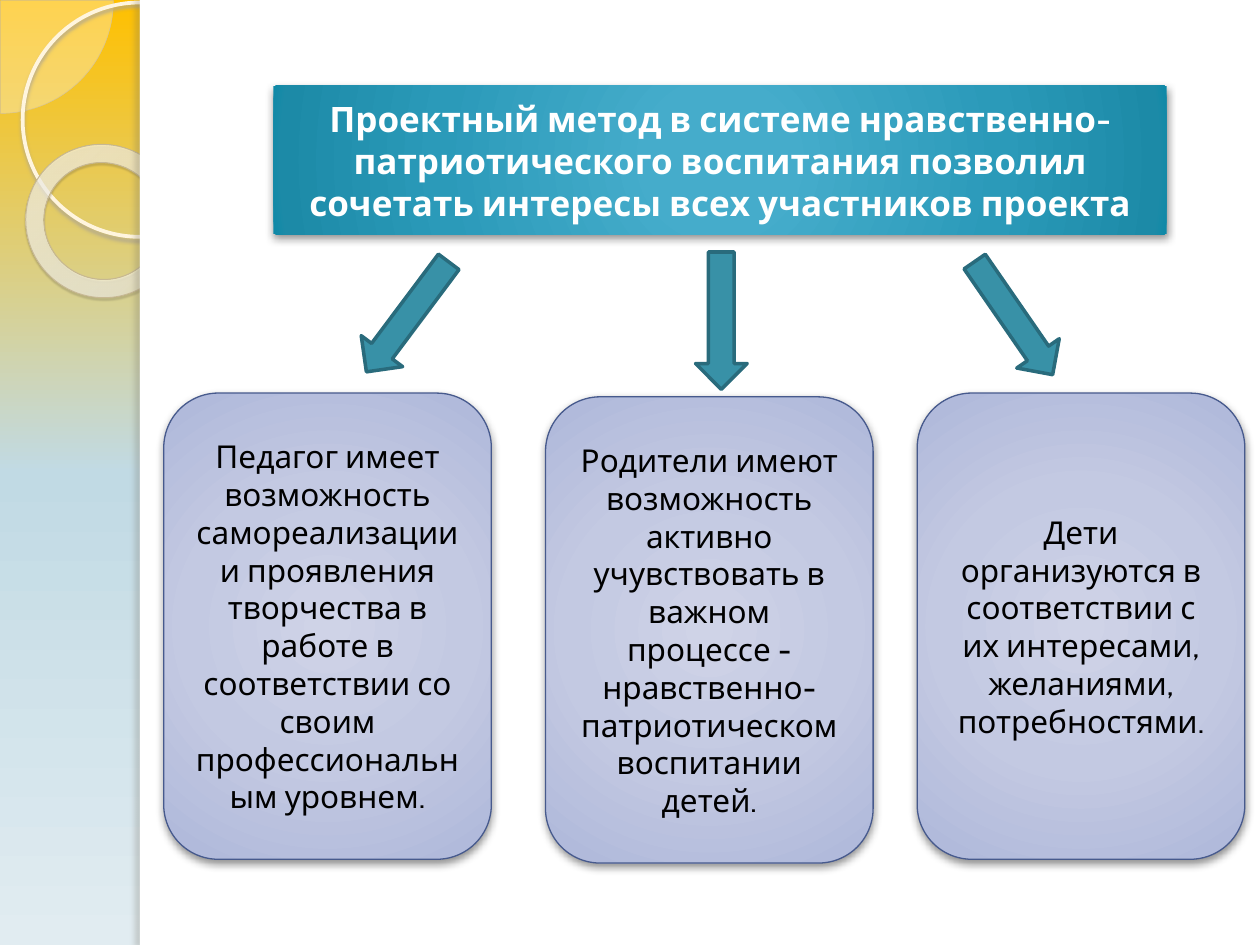
from lxml import etree
from pptx import Presentation
from pptx.dml.color import RGBColor
from pptx.enum.shapes import MSO_SHAPE
from pptx.enum.text import MSO_ANCHOR, MSO_AUTO_SIZE, PP_ALIGN
from pptx.oxml.ns import qn
from pptx.util import Inches, Pt

RECT = MSO_SHAPE.RECTANGLE
CARD = MSO_SHAPE.ROUNDED_RECTANGLE
ARROW = MSO_SHAPE.DOWN_ARROW
ELLIPSE = MSO_SHAPE.OVAL
DONUT = MSO_SHAPE.DONUT
PIE = MSO_SHAPE.PIE
CENTER = PP_ALIGN.CENTER
MIDDLE = MSO_ANCHOR.MIDDLE
NO_AUTOFIT = MSO_AUTO_SIZE.NONE

WHITE = RGBColor(0xFF, 0xFF, 0xFF)
BLACK = RGBColor(0x00, 0x00, 0x00)
TEAL = RGBColor(0x38, 0x91, 0xA7)
DARK_TEAL = RGBColor(0x29, 0x6B, 0x7C)
NAVY = RGBColor(0x47, 0x5A, 0x8D)
CREAM = RGBColor(0xFE, 0xFA, 0xF4)
RING = RGBColor(0xFF, 0xF5, 0xDE)
RING_SHADE = RGBColor(0xB0, 0xA6, 0x8F)
SAND = RGBColor(0xD3, 0xC3, 0x9F)
DONUT_EDGE = RGBColor(0xC7, 0xB8, 0x93)
DONUT_SHADE = RGBColor(0x5A, 0x54, 0x44)
PANEL_SHADE = RGBColor(0x73, 0x6F, 0x63)

# Gradient stops: position %, colour, opacity %
SKY = [(0, RGBColor(0xFF, 0xC0, 0x00), 100), (50, RGBColor(0xC1, 0xDA, 0xE4), 100),
       (100, RGBColor(0xE1, 0xEC, 0xF1), 100)]
HEADLINE_FILL = [(0, RGBColor(0x45, 0xAC, 0xCC), 100), (15, RGBColor(0x45, 0xAC, 0xCB), 100),
                 (62, RGBColor(0x2B, 0x9A, 0xB9), 100), (97, RGBColor(0x1C, 0x8A, 0xA7), 100),
                 (100, RGBColor(0x0E, 0x89, 0xA7), 100)]
CARD_FILL = [(0, RGBColor(0xCF, 0xD3, 0xE7), 100), (50, RGBColor(0xC3, 0xC9, 0xE2), 100),
             (97, RGBColor(0xAF, 0xB8, 0xDA), 100), (100, RGBColor(0xA8, 0xB2, 0xDA), 100)]
DONUT_FILL = [(0, RGBColor(0xFF, 0xFC, 0xF6), 70), (70, RGBColor(0xFF, 0xFE, 0xFB), 55),
              (100, RGBColor(0xF0, 0xD2, 0x8E), 60)]
CENTRE_FOCUS = (50, 50, 50, 50)
DONUT_FOCUS = (-408, -50, 508, 150)

# Shadows: colour, opacity %, blur pt, distance pt, direction in degrees
SOFT_SHADOW = (BLACK, 43, 5, 2, 90)
RING_SHADOW = (RING_SHADE, 85, 2, 2, 90)
DONUT_SHADOW = (DONUT_SHADE, 35, 1, 1.2, 75)
PANEL_SHADOW = (PANEL_SHADE, 25, 3, 3, 180)

HEADLINE = ("Проектный метод в системе нравственно-патриотического воспитания "
            "позволил сочетать интересы всех участников проекта")
# Card left, card top, text
PARTICIPANTS = [
    (13, 31.2, "Педагог имеет возможность самореализации и проявления творчества "
               "в работе в соответствии со своим профессиональным уровнем."),
    (43.3, 31.5, "Родители имеют возможность активно учувствовать в важном процессе - "
                 "нравственно-патриотическом воспитании детей."),
    (72.8, 31.2, "Дети организуются в соответствии с их интересами, желаниями, "
                 "потребностями."),
]
# Arrow left, top, rotation
ARROWS = [(30.3, 19.7, 36.8), (55.2, 20, 0), (78.4, 19.8, 325.4)]


def add_xml(parent, tag, **attributes):
    return etree.SubElement(parent, qn(tag), {k: str(v) for k, v in attributes.items()})


def add_colour(parent, colour, opacity):
    node = add_xml(parent, "a:srgbClr", val=colour)
    if opacity < 100:
        add_xml(node, "a:alpha", val=opacity * 1000)


class SlideBuilder:
    """Places styled elements on a grid of 100 columns by 75 rows."""
    font = "Cabin"
    columns, rows = 100, 75

    def __init__(self, prs):
        self.slide = prs.slides.add_slide(prs.slide_layouts[5])
        self.column = prs.slide_width / self.columns
        self.row = prs.slide_height / self.rows

    def place(self, left, top, width, height):
        return (round(left * self.column), round(top * self.row),
                round(width * self.column), round(height * self.row))

    def gradient(self, fill, owner, stops, focus=None):
        """Radial when a focus rectangle is given, otherwise top to bottom."""
        fill.gradient()
        grad = owner.find(".//" + qn("a:gradFill"))
        for child in list(grad):
            grad.remove(child)
        stop_list = add_xml(grad, "a:gsLst")
        for position, colour, opacity in stops:
            add_colour(add_xml(stop_list, "a:gs", pos=position * 1000), colour, opacity)
        if focus:
            sides = {side: share * 1000 for side, share in zip("ltrb", focus)}
            add_xml(add_xml(grad, "a:path", path="circle"), "a:fillToRect", **sides)
        else:
            add_xml(grad, "a:lin", ang=90 * 60000, scaled=0)

    def background(self, stops):
        self.gradient(self.slide.background.fill, self.slide.element, stops)

    def style(self, shape, fill=None, opacity=100, focus=None, line=None, shadow=None):
        if isinstance(fill, list):
            self.gradient(shape.fill, shape.element.spPr, fill, focus)
        elif fill is None:
            shape.fill.background()
        else:
            shape.fill.solid()
            shape.fill.fore_color.rgb = fill
            if opacity < 100:
                colour = shape.element.spPr.find(".//" + qn("a:srgbClr"))
                add_xml(colour, "a:alpha", val=opacity * 1000)
        if line:
            shape.line.color.rgb, shape.line.width = line[0], Pt(line[1])
        else:
            shape.line.fill.background()
        shape.shadow.inherit = False
        if shadow:
            colour, strength, blur, distance, direction = shadow
            effects = shape.element.spPr.find(qn("a:effectLst"))
            outer = add_xml(effects, "a:outerShdw", blurRad=Pt(blur), dist=Pt(distance),
                            dir=direction * 60000, algn="ctr", rotWithShape=0)
            add_colour(outer, colour, strength)

    def shape(self, kind, box, adjustments=(), rotation=0, **style):
        shape = self.slide.shapes.add_shape(kind, *self.place(*box))
        for index, value in enumerate(adjustments):
            shape.adjustments[index] = value
        shape.rotation = rotation
        self.style(shape, **style)
        return shape

    def label(self, shape, text, size, colour, bold=False):
        frame = shape.text_frame
        frame.text = text
        frame.word_wrap = True
        frame.auto_size = NO_AUTOFIT
        frame.vertical_anchor = MIDDLE
        paragraph = frame.paragraphs[0]
        paragraph.alignment = CENTER
        font = paragraph.font
        font.name, font.size, font.bold = self.font, Pt(size), bold
        font.color.rgb = colour

    def headline(self, box, text):
        title = self.slide.shapes.title
        title.left, title.top, title.width, title.height = self.place(*box)
        self.style(title, fill=HEADLINE_FILL, focus=CENTRE_FOCUS, shadow=SOFT_SHADOW)
        self.label(title, text, 20, WHITE, bold=True)
        # The title starts at the back; lift it above the white panel.
        title.element.getparent().append(title.element)

    def card(self, left, top, text):
        card = self.shape(CARD, (left, top, 26, 37), fill=CARD_FILL, focus=CENTRE_FOCUS,
                          line=(NAVY, 0.75), shadow=SOFT_SHADOW)
        self.label(card, text, 18, BLACK)

    def arrow(self, left, top, rotation):
        self.shape(ARROW, (left, top, 4.1, 10.9), rotation=rotation,
                   fill=TEAL, line=(DARK_TEAL, 2))

    def side_decoration(self):
        self.shape(PIE, (-8.9, -8.9, 17.9, 17.9), (0, 54.02),
                   fill=CREAM, opacity=33, line=(SAND, 0.25))
        self.shape(ELLIPSE, (1.8, 0.2, 18.6, 18.6), line=(RING, 2.15), shadow=RING_SHADOW)
        self.shape(DONUT, (2, 11.5, 12.3, 12.1), (0.12,), 38.6, fill=DONUT_FILL,
                   focus=DONUT_FOCUS, line=(DONUT_EDGE, 0.58), shadow=DONUT_SHADOW)
        self.shape(RECT, (11.1, 0, 88.9, 75), fill=WHITE)
        self.shape(RECT, (11.1, 0, 0.8, 75), fill=WHITE, shadow=PANEL_SHADOW)


def main():
    prs = Presentation()
    prs.slide_width, prs.slide_height = Inches(10), Inches(7.5)
    builder = SlideBuilder(prs)
    builder.background(SKY)
    builder.side_decoration()
    builder.headline((21.7, 6.8, 70.9, 11.8), HEADLINE)
    for participant in PARTICIPANTS:
        builder.card(*participant)
    for arrow in ARROWS:
        builder.arrow(*arrow)
    prs.save("out.pptx")


if __name__ == "__main__":
    main()
